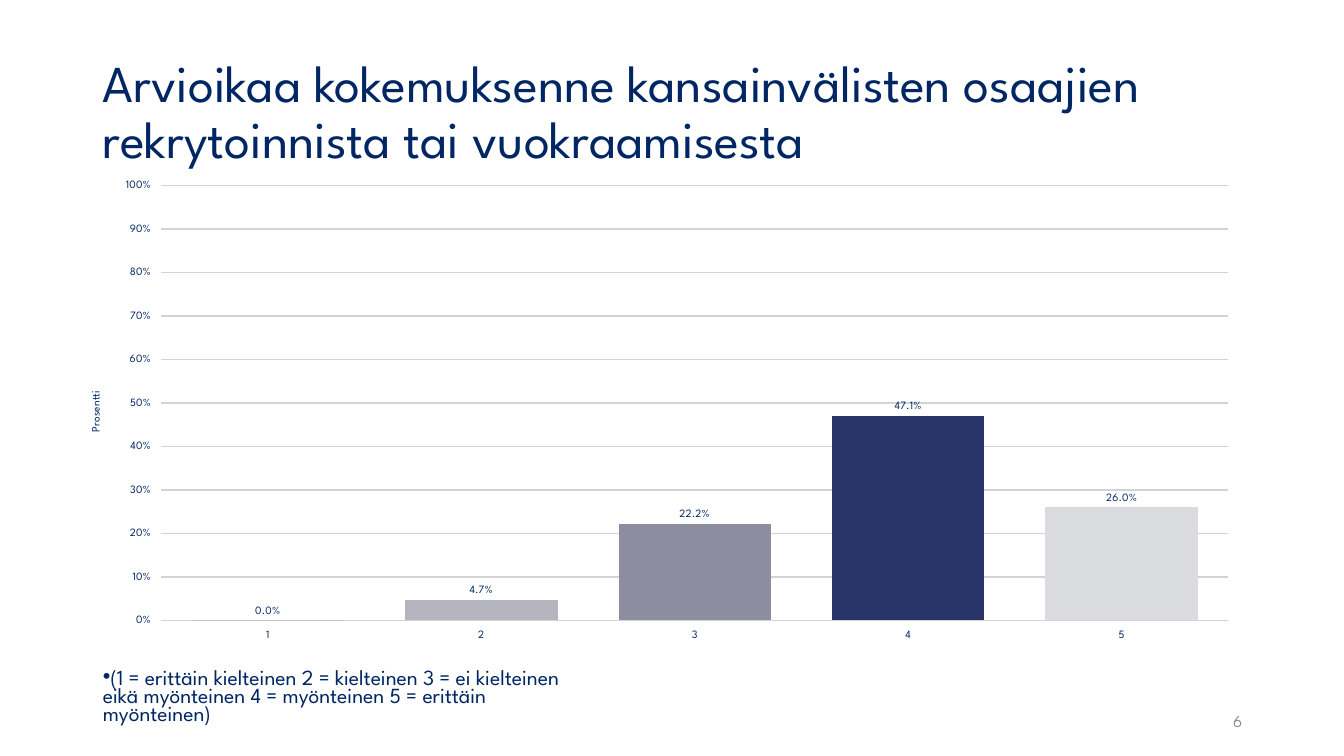
from dataclasses import dataclass

from lxml import etree
from pptx import Presentation
from pptx.chart.data import CategoryChartData
from pptx.dml.color import RGBColor
from pptx.enum.chart import XL_CHART_TYPE, XL_LABEL_POSITION, XL_TICK_MARK
from pptx.enum.text import MSO_ANCHOR, MSO_AUTO_SIZE, PP_ALIGN
from pptx.oxml.ns import qn
from pptx.util import Inches, Pt

COLUMNS = XL_CHART_TYPE.COLUMN_CLUSTERED
OUTSIDE_END = XL_LABEL_POSITION.OUTSIDE_END
TICK_OUTSIDE = XL_TICK_MARK.OUTSIDE
TOP = MSO_ANCHOR.TOP
MIDDLE = MSO_ANCHOR.MIDDLE
NO_AUTOFIT = MSO_AUTO_SIZE.NONE
LEFT = PP_ALIGN.LEFT
RIGHT = PP_ALIGN.RIGHT


@dataclass(frozen=True)
class Theme:
    font: str = "League Spartan"
    navy: str = "002663"
    muted: str = "8C8E9F"
    grid: str = "D3D3D3"
    bars: tuple = ("646883", "B4B5BF", "8C8E9F", "293568", "DADBDF")
    title_size: float = 37
    note_size: float = 15.4
    number_size: float = 12
    chart_size: float = 18
    label_size: float = 8


THEME = Theme()
RATINGS = {"1": 0, "2": 0.047, "3": 0.222, "4": 0.471, "5": 0.26}


def style_font(font, size, color=THEME.navy):
    font.name = THEME.font
    font.size = Pt(size)
    font.bold = False
    font.color.rgb = RGBColor.from_string(color)


def place(shape, left, top, width, height):
    shape.left, shape.top = Inches(left), Inches(top)
    shape.width, shape.height = Inches(width), Inches(height)


def add_bullet(paragraph, indent):
    properties = paragraph._p.get_or_add_pPr()
    properties.set("marL", "0")
    properties.set("indent", str(Inches(indent)))
    etree.SubElement(properties, qn("a:buChar")).set("char", "•")


def write_text(shape, text, size, color=THEME.navy, anchor=TOP, align=LEFT,
               line_spacing=1.0, space_after=0, bullet_indent=None):
    frame = shape.text_frame
    frame.word_wrap = True
    frame.auto_size = NO_AUTOFIT
    frame.vertical_anchor = anchor
    paragraph = frame.paragraphs[0]
    if bullet_indent is not None:
        add_bullet(paragraph, bullet_indent)
    paragraph.alignment = align
    paragraph.line_spacing = line_spacing
    paragraph.space_before = Pt(0)
    paragraph.space_after = Pt(space_after)
    run = paragraph.add_run()
    run.text = text
    style_font(run.font, size, color)


def set_layout(parent, position, **values):
    layout = parent.find(qn("c:layout"))
    if layout is None:
        layout = etree.Element(qn("c:layout"))
        parent.insert(position, layout)
    manual = etree.SubElement(layout, qn("c:manualLayout"))
    for name, value in values.items():
        etree.SubElement(manual, qn(f"c:{name}")).set("val", str(value))


def style_axis(axis):
    axis.major_tick_mark = TICK_OUTSIDE
    axis.format.line.fill.background()
    style_font(axis.tick_labels.font, THEME.label_size)


def style_value_axis(axis):
    style_axis(axis)
    axis.minimum_scale, axis.maximum_scale, axis.major_unit = 0, 1, 0.1
    axis.tick_labels.number_format = "0%"
    axis.tick_labels.number_format_is_linked = False
    axis.has_major_gridlines = True
    line = axis.major_gridlines.format.line
    line.color.rgb = RGBColor.from_string(THEME.grid)
    line.width = Pt(1)
    run = axis.axis_title.text_frame.paragraphs[0].add_run()
    run.text = "Prosentti"
    style_font(run.font, THEME.label_size)
    set_layout(axis.axis_title._element, 1,
               xMode="edge", yMode="edge", x=0.017, y=0.453)


def style_columns(plot):
    plot.vary_by_categories = False
    plot.gap_width = 40
    plot.overlap = -2
    for index, color in enumerate(THEME.bars):
        fill = plot.series[0].points[index].format.fill
        fill.solid()
        fill.fore_color.rgb = RGBColor.from_string(color)
    plot.has_data_labels = True
    labels = plot.data_labels
    labels.show_value = True
    labels.number_format = "0.0%"
    labels.number_format_is_linked = False
    labels.position = OUTSIDE_END
    style_font(labels.font, THEME.label_size)


def add_rating_chart(slide):
    data = CategoryChartData()
    data.categories = list(RATINGS)
    data.add_series("Series 1", list(RATINGS.values()))
    chart = slide.shapes.add_chart(COLUMNS, Inches(0.67), Inches(1.7),
                                   Inches(11.75), Inches(4.76), data).chart
    chart.has_legend = False
    chart.has_title = False
    style_font(chart.font, THEME.chart_size)
    style_axis(chart.category_axis)
    style_value_axis(chart.value_axis)
    style_columns(chart.plots[0])
    plot_area = chart._chartSpace.find(f".//{qn('c:plotArea')}")
    set_layout(plot_area, 0, layoutTarget="inner", xMode="edge", yMode="edge",
               x=0.079, y=0.03, w=0.901, h=0.906)


def main():
    presentation = Presentation()
    presentation.slide_width = Inches(13.33)
    presentation.slide_height = Inches(7.5)
    slide = presentation.slides.add_slide(presentation.slide_layouts[1])

    title = slide.shapes.title
    place(title, 0.92, 0.4, 11.5, 1.45)
    write_text(title, "Arvioikaa kokemuksenne kansainvälisten osaajien "
               "rekrytoinnista tai vuokraamisesta",
               THEME.title_size, anchor=MIDDLE, line_spacing=0.9)

    scale_note = slide.placeholders[1]
    place(scale_note, 0.92, 6.61, 4.76, 0.68)
    write_text(scale_note, "(1 = erittäin kielteinen 2 = kielteinen "
               "3 = ei kielteinen eikä myönteinen 4 = myönteinen "
               "5 = erittäin myönteinen)",
               THEME.note_size, line_spacing=0.7, bullet_indent=-0.25)

    page_number = slide.shapes.add_textbox(
        Inches(9.42), Inches(6.95), Inches(3), Inches(0.4))
    write_text(page_number, "6", THEME.number_size, color=THEME.muted,
               anchor=MIDDLE, align=RIGHT, space_after=6)

    add_rating_chart(slide)
    presentation.save("out.pptx")


if __name__ == "__main__":
    main()
